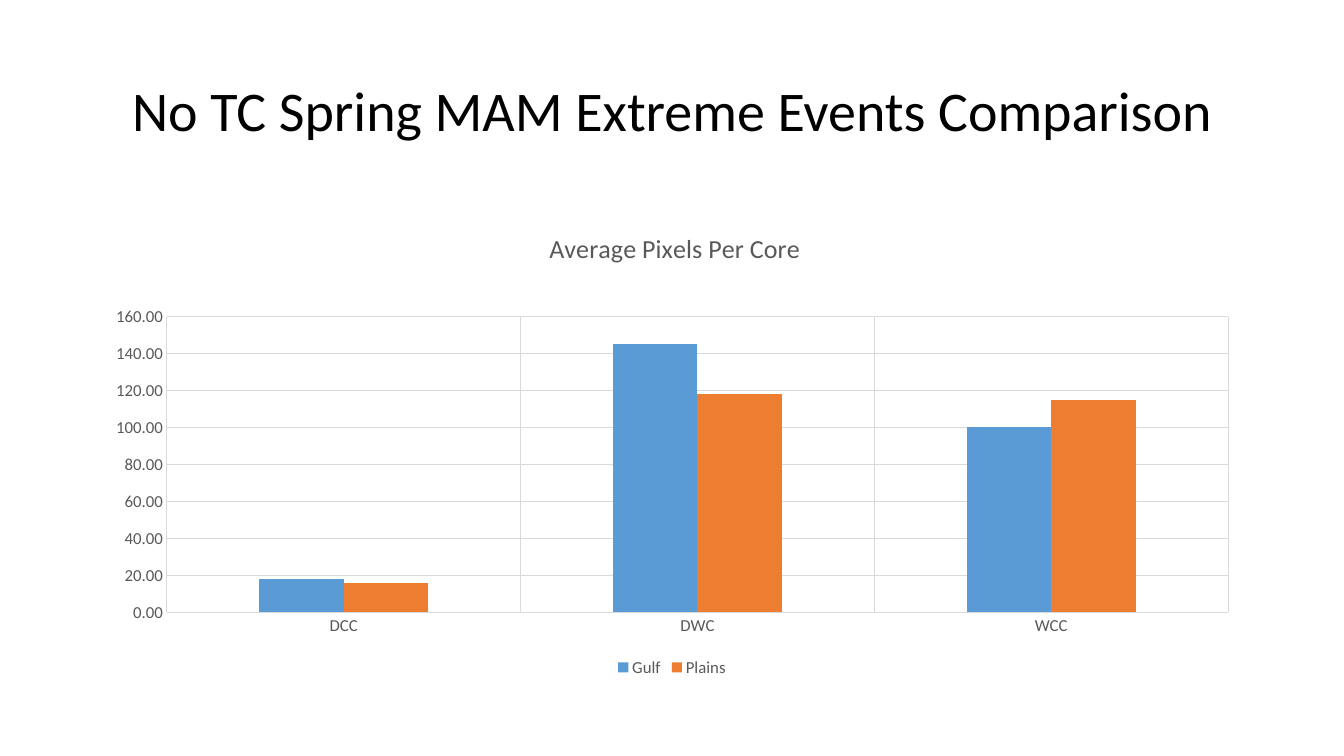
import pptx
import pptx.util
import pptx.dml.color
import pptx.chart.data
import pptx.enum.chart
import pptx.enum.text
import pptx.oxml
import pptx.oxml.ns

RGBColor = pptx.dml.color.RGBColor
Pt = pptx.util.Pt
BLACK = RGBColor(0x00, 0x00, 0x00)
GRAY = RGBColor(0x59, 0x59, 0x59)
RULE = RGBColor(0xD9, 0xD9, 0xD9)
BLUE = RGBColor(0x5B, 0x9B, 0xD5)
ORANGE = RGBColor(0xED, 0x7D, 0x31)

HEADING = "No TC Spring MAM Extreme Events Comparison"
CHART_HEADING = "Average Pixels Per Core"
CORES = ["DCC", "DWC", "WCC"]
REGIONS = [
    ("Gulf", (18, 145, 100), BLUE),
    ("Plains", (16, 118, 115), ORANGE),
]

FONT = "Calibri"
WIDTH, HEIGHT = pptx.util.Inches(13.33), pptx.util.Inches(7.5)
MARGIN = pptx.util.Inches(0.92)
CONTENT_WIDTH = WIDTH - 2 * MARGIN
HEADING_TOP, HEADING_HEIGHT = pptx.util.Inches(0.4), pptx.util.Inches(1.45)
CHART_TOP, CHART_HEIGHT = pptx.util.Inches(2), pptx.util.Inches(4.76)
CHART_HEADING_PLACE = {"x": 0.39, "y": 0.05}
PLOT_PLACE = {"x": 0.064, "y": 0.24, "w": 0.916, "h": 0.616}


def style_font(font, size, color):
    font.name = FONT
    font.size = Pt(size)
    font.bold = False
    font.color.rgb = color


def write_text(frame, text, size=12, color=BLACK, spacing=None):
    paragraph = frame.paragraphs[0]
    paragraph.alignment = pptx.enum.text.PP_ALIGN.CENTER
    paragraph.line_spacing = spacing
    run = paragraph.add_run()
    run.text = text
    style_font(run.font, size, color)


def place(parent, position, index, inner=False):
    for old in parent.findall(pptx.oxml.ns.qn("c:layout")):
        parent.remove(old)
    target = '<c:layoutTarget val="inner"/>' if inner else ""
    modes = "".join(f'<c:{key}Mode val="edge"/>' for key in "xy")
    shares = "".join(f'<c:{key} val="{share}"/>' for key, share in position.items())
    parent.insert(index, pptx.oxml.parse_xml(
        f'<c:layout {pptx.oxml.ns.nsdecls("c")}><c:manualLayout>'
        f'{target}{modes}{shares}</c:manualLayout></c:layout>'))


def style_line(line):
    line.color.rgb = RULE
    line.width = Pt(0.75)


def add_heading(slide):
    box = slide.shapes.add_textbox(MARGIN, HEADING_TOP, CONTENT_WIDTH, HEADING_HEIGHT)
    box.text_frame.word_wrap = True
    box.text_frame.vertical_anchor = pptx.enum.text.MSO_ANCHOR.MIDDLE
    write_text(box.text_frame, HEADING, size=40, spacing=0.9)


def add_comparison(slide):
    pixels = pptx.chart.data.CategoryChartData(number_format="0.00")
    pixels.categories = CORES
    for region, averages, _ in REGIONS:
        pixels.add_series(region, averages)
    chart = slide.shapes.add_chart(
        pptx.enum.chart.XL_CHART_TYPE.COLUMN_CLUSTERED,
        MARGIN, CHART_TOP, CONTENT_WIDTH, CHART_HEIGHT, pixels).chart
    style_font(chart.font, 10, BLACK)

    chart.has_title = True
    write_text(chart.chart_title.text_frame, CHART_HEADING, size=18.6, color=GRAY)
    chart.chart_title.include_in_layout = False
    place(chart.chart_title._element, CHART_HEADING_PLACE, 1)

    columns = chart.plots[0]
    columns.gap_width = 219
    columns.overlap = 0
    columns.vary_by_categories = False
    place(columns._element.getparent(), PLOT_PLACE, 0, inner=True)
    for series, (_, _, color) in zip(columns.series, REGIONS):
        series.format.fill.solid()
        series.format.fill.fore_color.rgb = color
        series.invert_if_negative = False

    for axis in (chart.category_axis, chart.value_axis):
        axis.major_tick_mark = pptx.enum.chart.XL_TICK_MARK.NONE
        axis.minor_tick_mark = pptx.enum.chart.XL_TICK_MARK.NONE
        axis.has_major_gridlines = True
        style_line(axis.major_gridlines.format.line)
        style_font(axis.tick_labels.font, 12, GRAY)
    style_line(chart.category_axis.format.line)
    averages_axis = chart.value_axis
    averages_axis.format.line.fill.background()
    averages_axis.minimum_scale, averages_axis.maximum_scale = 0, 160
    averages_axis.major_unit = 20
    averages_axis.tick_labels.number_format = "0.00"
    averages_axis.tick_labels.number_format_is_linked = False

    chart.has_legend = True
    chart.legend.position = pptx.enum.chart.XL_LEGEND_POSITION.BOTTOM
    chart.legend.include_in_layout = False
    style_font(chart.legend.font, 12, GRAY)


def main():
    deck = pptx.Presentation()
    deck.slide_width, deck.slide_height = WIDTH, HEIGHT
    slide = deck.slides.add_slide(deck.slide_layouts[6])
    add_heading(slide)
    add_comparison(slide)
    deck.save("out.pptx")


if __name__ == "__main__":
    main()
